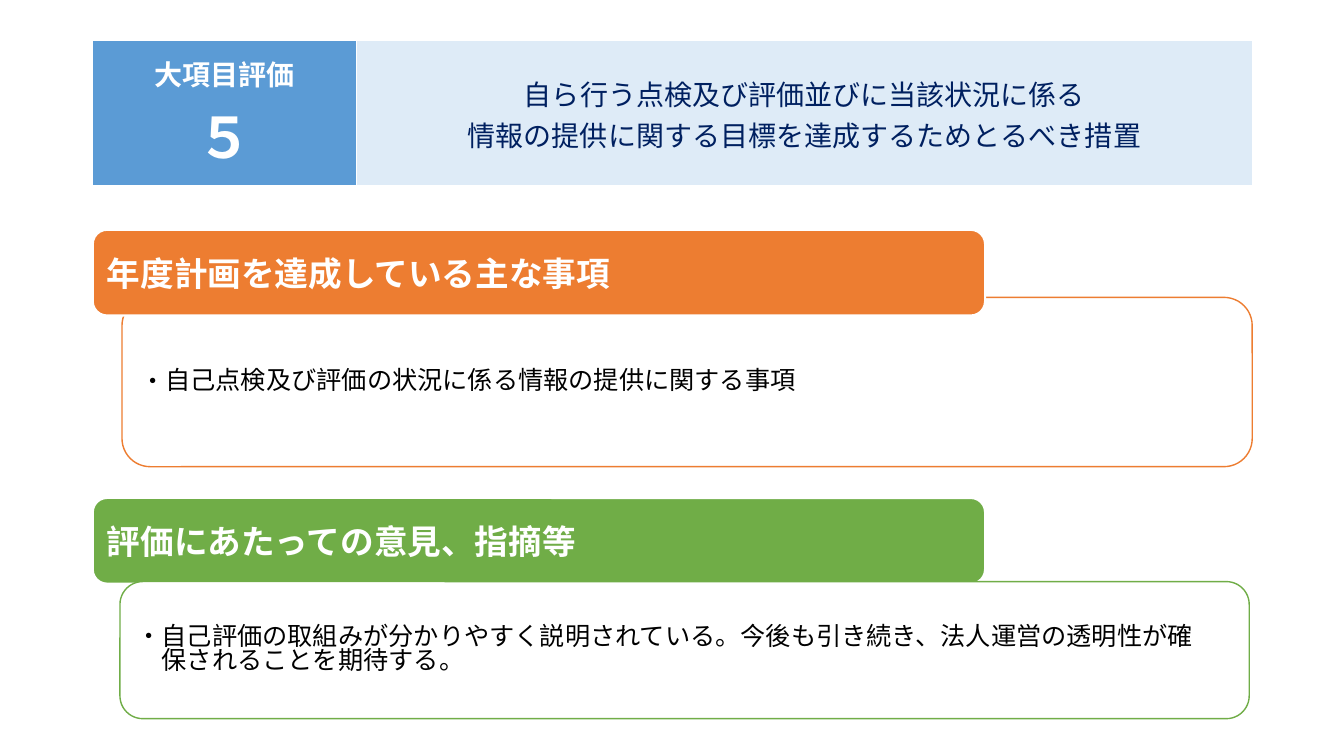
import pptx
import pptx.util
import pptx.oxml.ns
import pptx.dml.color
import pptx.enum.shapes
import pptx.enum.text
from lxml import etree

Inches, Pt = pptx.util.Inches, pptx.util.Pt
ALIGN = pptx.enum.text.PP_ALIGN
MIDDLE = pptx.enum.text.MSO_ANCHOR.MIDDLE
qn = pptx.oxml.ns.qn

COLORS = {
    "white": "FFFFFF", "black": "000000", "navy": "002060", "blue": "5B9BD5",
    "pale_blue": "DEEBF7", "orange": "ED7D31", "green": "70AD47",
}
JAPANESE_FONT = "Noto Sans CJK JP"
HEADING_LEFT, HEADING_WIDTH, HEADING_HEIGHT = 0.92, 8.85, 0.85


def rgb(color):
    return pptx.dml.color.RGBColor.from_string(COLORS[color])


def write(paragraph, text, size, color, bold=False, font=JAPANESE_FONT, align=ALIGN.LEFT):
    paragraph.text = text
    paragraph.alignment = align
    for run in paragraph.runs:
        run.font.size = Pt(size)
        run.font.bold = bold
        run.font.name = font
        run.font.color.rgb = rgb(color)
        latin = run.font._element.find(qn("a:latin"))
        east_asian = etree.Element(qn("a:ea"), typeface=JAPANESE_FONT)
        latin.addnext(east_asian)


def add_bullet(paragraph, indent):
    properties = paragraph._p.get_or_add_pPr()
    properties.set("marL", str(Inches(indent)))
    properties.set("indent", str(-Inches(indent)))
    etree.SubElement(properties, qn("a:buFont"), typeface=JAPANESE_FONT)
    etree.SubElement(properties, qn("a:buChar"), char="・")


def add_rounded_box(slide, left, top, width, height, fill, line, line_width):
    box = slide.shapes.add_shape(
        pptx.enum.shapes.MSO_SHAPE.ROUNDED_RECTANGLE,
        Inches(left), Inches(top), Inches(width), Inches(height))
    box.shadow.inherit = False
    box.fill.solid()
    box.fill.fore_color.rgb = rgb(fill)
    box.line.color.rgb = rgb(line)
    box.line.width = Pt(line_width)
    box.text_frame.word_wrap = True
    box.text_frame.vertical_anchor = MIDDLE
    return box.text_frame.paragraphs[0]


def add_heading(slide, text, top, color):
    heading = add_rounded_box(slide, HEADING_LEFT, top, HEADING_WIDTH, HEADING_HEIGHT,
                              color, "white", 1.5)
    write(heading, text, size=24, color="white", bold=True)


def add_findings(slide, text, left, top, width, height, color):
    findings = add_rounded_box(slide, left, top, width, height, "white", color, 1)
    write(findings, text, size=18, color="black")
    findings.line_spacing = 0.82
    add_bullet(findings, 0.25)


def set_borders(cell):
    properties = cell._tc.get_or_add_tcPr()
    for position, (side, width) in enumerate([("L", 1), ("R", 1), ("T", 1), ("B", 3)]):
        border = etree.Element(qn(f"a:ln{side}"), w=str(Pt(width)))
        fill = etree.SubElement(border, qn("a:solidFill"))
        etree.SubElement(fill, qn("a:srgbClr"), val=COLORS["white"])
        properties.insert(position, border)


def fill_cell(cell, fill, lines, color, bold):
    cell.fill.solid()
    cell.fill.fore_color.rgb = rgb(fill)
    cell.vertical_anchor = MIDDLE
    cell.margin_left = cell.margin_right = Inches(0.04)
    cell.margin_top = cell.margin_bottom = 0
    for index, (text, size) in enumerate(lines):
        paragraph = cell.text_frame.add_paragraph() if index else cell.text_frame.paragraphs[0]
        write(paragraph, text, size, color, bold=bold, font="Calibri", align=ALIGN.CENTER)
    set_borders(cell)


def add_title_table(slide):
    table = slide.shapes.add_table(
        1, 2, Inches(0.92), Inches(0.4), Inches(11.5), Inches(1.45)).table
    table.first_row = table.horz_banding = False
    for column, width in zip(table.columns, (2.62, 8.88)):
        column.width = Inches(width)
    fill_cell(table.cell(0, 0), "blue", [("大項目評価", 20), ("５", 40)], "white", bold=True)
    fill_cell(table.cell(0, 1), "pale_blue", [
        ("自ら行う点検及び評価並びに当該状況に係る", 20),
        ("情報の提供に関する目標を達成するためとるべき措置", 20),
    ], "navy", bold=False)


def main():
    deck = pptx.Presentation()
    deck.slide_width, deck.slide_height = Inches(13.33), Inches(7.5)
    slide = deck.slides.add_slide(deck.slide_layouts[6])

    add_title_table(slide)
    add_findings(slide, "自己点検及び評価の状況に係る情報の提供に関する事項",
                 1.21, 2.95, 11.21, 1.68, "orange")
    add_heading(slide, "年度計画を達成している主な事項", 2.28, "orange")
    add_heading(slide, "評価にあたっての意見、指摘等", 4.94, "green")
    add_findings(slide, "自己評価の取組みが分かりやすく説明されている。今後も引き続き、"
                 "法人運営の透明性が確\v保されることを期待する。",
                 1.19, 5.77, 11.2, 1.36, "green")

    deck.save("out.pptx")


if __name__ == "__main__":
    main()
